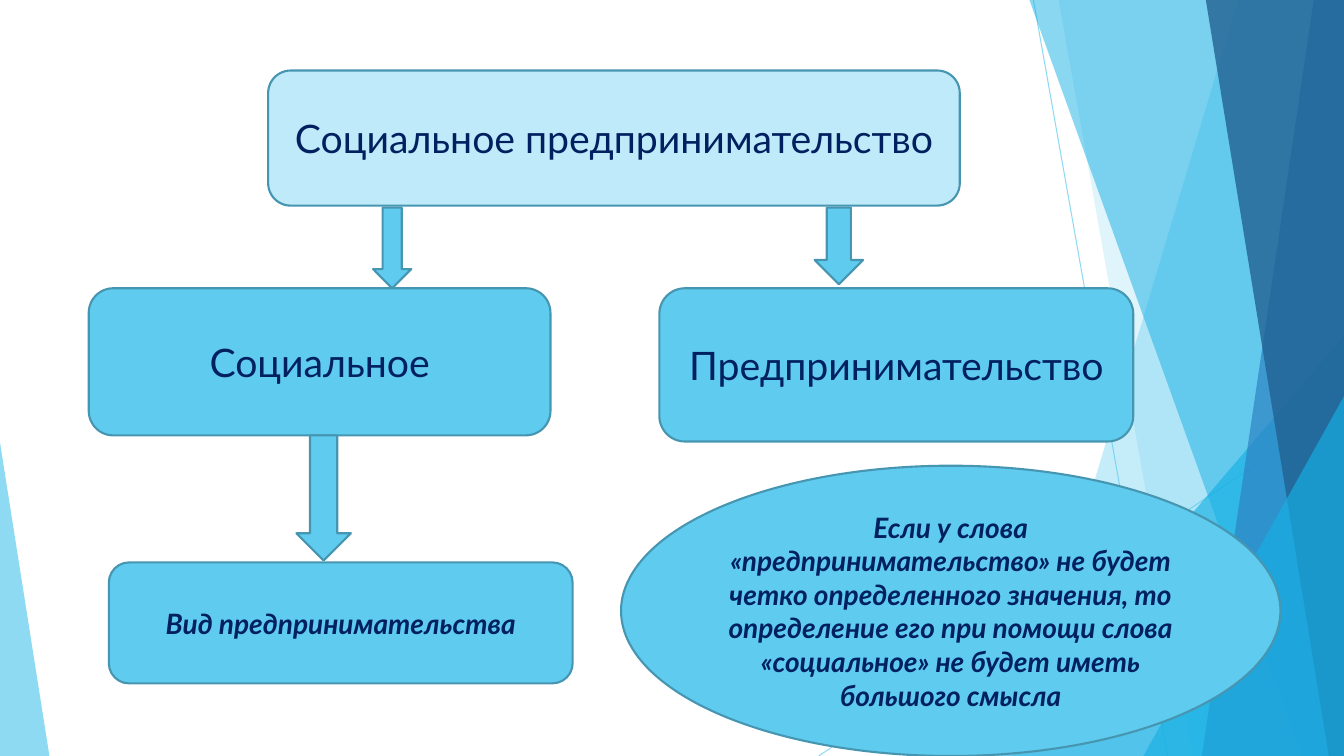
from dataclasses import dataclass

from lxml.etree import SubElement
from pptx import Presentation
from pptx.dml.color import RGBColor
from pptx.enum.shapes import MSO_CONNECTOR, MSO_SHAPE
from pptx.enum.text import MSO_ANCHOR, PP_ALIGN
from pptx.oxml.ns import qn
from pptx.util import Inches, Pt


@dataclass(frozen=True)
class Theme:
    font: str = "Lato"
    ink: str = "002060"
    edge: str = "4696B1"
    sky: str = "5FCBEF"
    pale: str = "BFEAF9"
    azure: str = "17B0E4"
    blue: str = "2E83C3"
    navy: str = "226292"
    head: int = 28
    note: int = 20
    rim: float = 1.5
    hair: float = 0.75


WIDTH, HEIGHT = 13.33, 7.5


def write(shape, text, font, size, color, bold=False, italic=False):
    frame = shape.text_frame
    frame.word_wrap = True
    frame.vertical_anchor = MSO_ANCHOR.MIDDLE
    par = frame.paragraphs[0]
    par.alignment = PP_ALIGN.CENTER
    run = par.add_run()
    run.text = text
    run.font.name = font
    run.font.size = Pt(size)
    run.font.bold = bold
    run.font.italic = italic
    run.font.color.rgb = RGBColor.from_string(color)


def fade(shape, percent):
    for color in shape._element.spPr.iter(qn("a:srgbClr")):
        SubElement(color, qn("a:alpha")).set("val", str(percent * 1000))


class Board:
    def __init__(self, slide, theme):
        self.shapes = slide.shapes
        self.theme = theme

    def paint(self, shape, fill, edge=None):
        shape.shadow.inherit = False
        shape.fill.solid()
        shape.fill.fore_color.rgb = RGBColor.from_string(fill)
        if edge:
            shape.line.color.rgb = RGBColor.from_string(edge)
            shape.line.width = Pt(self.theme.rim)
        else:
            shape.line.fill.background()

    def ray(self, start, end):
        ends = [Inches(v) for v in (*start, *end)]
        line = self.shapes.add_connector(MSO_CONNECTOR.STRAIGHT, *ends)
        line.line.color.rgb = RGBColor.from_string(self.theme.sky)
        line.line.width = Pt(self.theme.hair)
        fade(line, 70)
        SubElement(line._element.spPr, qn("a:effectLst"))

    def band(self, top, base, fill, alpha):
        """Fill from a slanted left edge to the right side of the slide."""
        points = [(WIDTH, 0), (WIDTH, HEIGHT), (base, HEIGHT)]
        pen = self.shapes.build_freeform(Inches(top), 0)
        pen.add_line_segments([(Inches(x), Inches(y)) for x, y in points], close=True)
        shape = pen.convert_to_shape()
        self.paint(shape, fill)
        fade(shape, alpha)

    def wedge(self, left, top, width, apex, fill, alpha):
        """Triangle standing on the bottom edge of the slide."""
        box = [Inches(v) for v in (left, top, width, HEIGHT - top)]
        shape = self.shapes.add_shape(MSO_SHAPE.ISOSCELES_TRIANGLE, *box)
        shape.adjustments[0] = apex
        self.paint(shape, fill)
        fade(shape, alpha)

    def node(self, kind, box, fill, text=None, **style):
        shape = self.shapes.add_shape(kind, *[Inches(v) for v in box])
        self.paint(shape, fill, self.theme.edge)
        if text:
            write(shape, text, font=self.theme.font, color=self.theme.ink, **style)


def main():
    deck = Presentation()
    deck.slide_width, deck.slide_height = Inches(WIDTH), Inches(HEIGHT)
    theme = Theme()
    board = Board(deck.slides.add_slide(deck.slide_layouts[6]), theme)

    # Faceted backdrop
    board.ray((10.25, 0), (11.58, HEIGHT))
    board.ray((WIDTH, 4.03), (8.12, HEIGHT))
    board.band(12.28, 10.04, theme.sky, 36)
    board.band(10.5, 11.83, theme.sky, 20)
    board.wedge(9.77, 3.33, 3.56, 1, theme.azure, 66)
    board.band(10.21, 12.91, theme.azure, 50)
    board.band(13.03, 11.92, theme.blue, 70)
    board.band(11.96, 13.18, theme.navy, 80)
    board.wedge(11.34, 3.93, 1.99, 1, theme.azure, 66)
    board.wedge(0, 4.39, 0.49, 0, theme.sky, 70)

    # Terms and their meaning
    head = {"size": theme.head}
    note = {"size": theme.note, "bold": True, "italic": True}
    card, oval = MSO_SHAPE.ROUNDED_RECTANGLE, MSO_SHAPE.OVAL
    nodes = [
        (card, (2.66, 0.7, 6.86, 1.34), theme.pale, "Социальное предпринимательство", head),
        (card, (0.88, 2.86, 4.58, 1.46), theme.sky, "Социальное", head),
        (card, (6.54, 2.86, 4.7, 1.52), theme.sky, "Предпринимательство", head),
        (card, (1.08, 5.58, 4.6, 1.2), theme.sky, "Вид предпринимательства", note),
        (oval, (6.16, 4.62, 6.54, 2.88), theme.sky,
         "Если у слова «предпринимательство» не будет четко определенного значения, "
         "то определение его при помощи слова «социальное» не будет иметь большого смысла",
         note),
    ]
    for kind, box, fill, text, style in nodes:
        board.node(kind, box, fill, text, **style)

    # Arrows between the levels
    for box in [(2.94, 4.32, 0.54, 1.24), (3.7, 2.06, 0.38, 0.8), (8.08, 2.06, 0.48, 0.76)]:
        board.node(MSO_SHAPE.DOWN_ARROW, box, theme.sky)

    deck.save("out.pptx")


if __name__ == "__main__":
    main()
